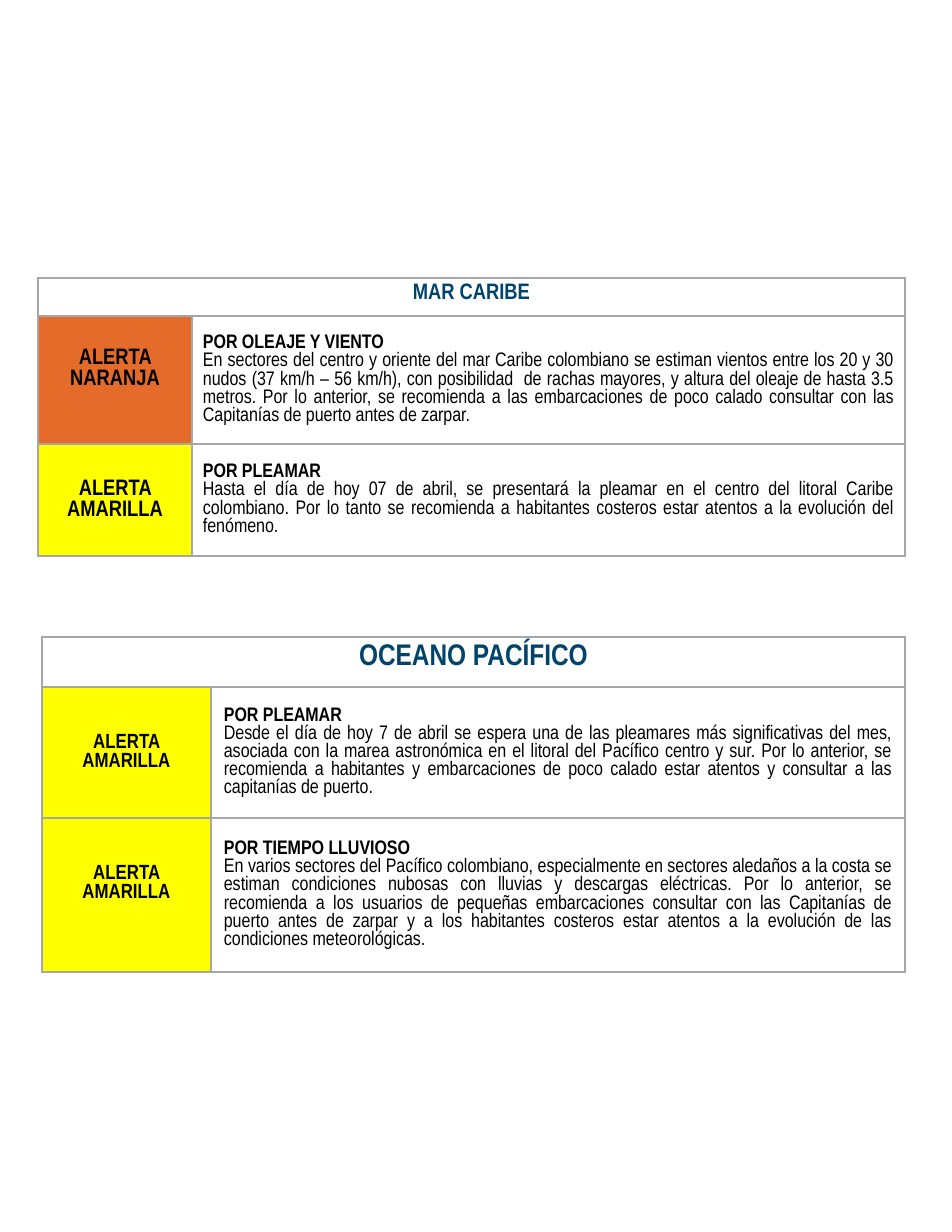
from lxml import etree
from pptx import Presentation
from pptx.dml.color import RGBColor
from pptx.enum.text import MSO_ANCHOR as Anchor, PP_ALIGN as Align
from pptx.oxml import parse_xml
from pptx.util import Pt

SCALE = 914400 / 134.3
FONT = "Arial Narrow"
NAVY, BLACK, GREY = "00446B", "000000", "A6A6A6"
ORANGE, YELLOW = "E56B2B", "FFFF00"
MAIN_NS = "http://schemas.openxmlformats.org/drawingml/2006/main"


def px(length):
    return round(length * SCALE)


def fill_cell(cell, lines, align, anchor, margins, color=None):
    """Write lines of (text, size, bold, colour) and set fill, margins and borders."""
    cell.vertical_anchor = anchor
    cell.margin_left = cell.margin_right = px(margins[0])
    cell.margin_top, cell.margin_bottom = px(margins[1]), px(margins[2])
    if color:
        cell.fill.solid()
        cell.fill.fore_color.rgb = RGBColor.from_string(color)
    else:
        cell.fill.background()
    cell.text = "\n".join(line[0] for line in lines)
    for para, (_, size, bold, ink) in zip(cell.text_frame.paragraphs, lines):
        para.alignment = align
        para.font.name, para.font.size, para.font.bold = FONT, Pt(size), bold
        para.font.color.rgb = RGBColor.from_string(ink)
    properties = cell._tc.get_or_add_tcPr()
    for index, side in enumerate(("lnL", "lnR", "lnT", "lnB")):
        properties.insert(index, parse_xml(
            f'<a:{side} xmlns:a="{MAIN_NS}" w="12700"><a:solidFill>'
            f'<a:srgbClr val="{GREY}"/></a:solidFill></a:{side}>'))


# Alert rows: label, colour, lift of the label above the middle, heading, advice
caribbean = [
    ("ALERTA NARANJA", ORANGE, 22, "POR OLEAJE Y VIENTO",
     "En sectores del centro y oriente del mar Caribe colombiano se estiman vientos "
     "entre los 20 y 30 nudos (37 km/h – 56 km/h), con posibilidad  de rachas mayores, "
     "y altura del oleaje de hasta 3.5 metros. Por lo anterior, se recomienda a las "
     "embarcaciones de poco calado consultar con las Capitanías de puerto antes de zarpar."),
    ("ALERTA AMARILLA", YELLOW, 0, "POR PLEAMAR",
     "Hasta el día de hoy 07 de abril, se presentará la pleamar en el centro del litoral "
     "Caribe colombiano. Por lo tanto se recomienda a habitantes costeros estar atentos "
     "a la evolución del fenómeno."),
]
pacific = [
    ("ALERTA AMARILLA", YELLOW, 0, "POR PLEAMAR",
     "Desde el día de hoy 7 de abril se espera una de las pleamares más significativas "
     "del mes, asociada con la marea astronómica en el litoral del Pacífico centro y sur. "
     "Por lo anterior, se recomienda a habitantes y embarcaciones de poco calado estar "
     "atentos y consultar a las capitanías de puerto."),
    ("ALERTA AMARILLA", YELLOW, 22, "POR TIEMPO LLUVIOSO",
     "En varios sectores del Pacífico colombiano, especialmente en sectores aledaños a la "
     "costa se estiman condiciones nubosas con lluvias y descargas eléctricas. Por lo "
     "anterior, se recomienda a los usuarios de pequeñas embarcaciones consultar con las "
     "Capitanías de puerto antes de zarpar y a los habitantes costeros estar atentos a la "
     "evolución de las condiciones meteorológicas."),
]

# Tables: title, title size, label size, left, top, widths, heights, margins, alerts
tables = [
    ("MAR CARIBE", 12, 12, 38, 278, (154, 713), (38, 128, 112), (11, 5), caribbean),
    ("OCEANO PACÍFICO", 16, 11, 42, 637, (169, 694), (50, 131, 154), (13, 7), pacific),
]

deck = Presentation()
deck.slide_width, deck.slide_height = px(952), px(1232)
page = deck.slides.add_slide(deck.slide_layouts[6])

for title, title_size, label_size, left, top, widths, heights, (side, edge), alerts in tables:
    table = page.shapes.add_table(len(heights), len(widths), px(left), px(top),
                                  px(sum(widths)), px(sum(heights))).table
    table.horz_banding = False
    for column, width in zip(table.columns, widths):
        column.width = px(width)
    for row, height in zip(table.rows, heights):
        row.height = px(height)

    table.cell(0, 0).merge(table.cell(0, 1))
    for column in range(2):
        lines = [(title if column == 0 else "", title_size, True, NAVY)]
        fill_cell(table.cell(0, column), lines, Align.CENTER, Anchor.TOP, (side, edge, edge))

    for number, (label, color, lift, heading, advice) in enumerate(alerts, start=1):
        fill_cell(table.cell(number, 0), [(label, label_size, True, BLACK)],
                  Align.CENTER, Anchor.MIDDLE, (side, edge, edge + lift), color)
        fill_cell(table.cell(number, 1),
                  [(heading, 10.5, True, BLACK), (advice, 10.5, False, BLACK)],
                  Align.JUSTIFY, Anchor.MIDDLE, (side, edge, edge))

deck.save("out.pptx")
